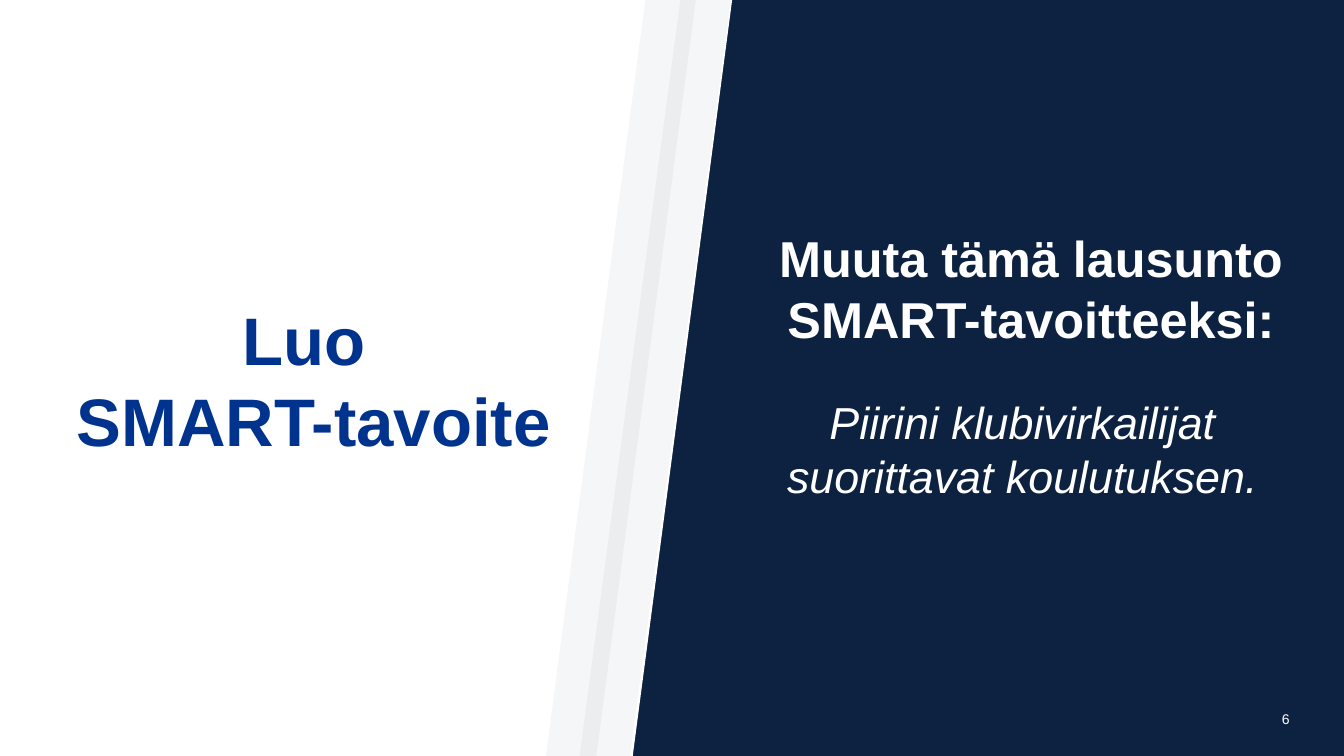
from lxml.etree import SubElement
from pptx import Presentation
from pptx.dml.color import RGBColor
from pptx.enum.text import MSO_ANCHOR as Anchor, PP_ALIGN as Align
from pptx.oxml.ns import qn
from pptx.util import Pt

WIDTH, HEIGHT = 960, 540
NAVY, BLUE, WHITE = "0D2240", "00338D", "FFFFFF"
SLANT = 71.5


def color(value):
    """Turn a hex string into a colour."""
    return RGBColor.from_string(value)


def add_polygon(page, points, fill, alpha=None):
    """Draw a filled outline through points, with optional opacity in percent."""
    builder = page.shapes.build_freeform(*points[0], scale=Pt(1))
    builder.add_line_segments(points[1:], close=True)
    shape = builder.convert_to_shape()
    shape.shadow.inherit = False
    shape.fill.solid()
    shape.fill.fore_color.rgb = color(fill)
    shape.line.fill.background()
    if alpha is not None:
        tint = shape.fill._xPr.find(qn("a:solidFill"))[0]
        SubElement(tint, qn("a:alpha")).set("val", str(alpha * 1000))


def add_text(page, box, lines, ink, align=Align.CENTER, anchor=Anchor.TOP, **formats):
    """Place a wrapped text box with one paragraph per line."""
    frame = page.shapes.add_textbox(*map(Pt, box)).text_frame
    frame.word_wrap = True
    frame.vertical_anchor = anchor
    for index, line in enumerate(lines):
        para = frame.add_paragraph() if index else frame.paragraphs[0]
        para.alignment = align
        span = para.add_run()
        span.text = line
        for name, value in {"name": "Arial", **formats}.items():
            setattr(span.font, name, value)
        span.font.color.rgb = color(ink)


def add_backdrop(page, left, top, width, height):
    """Split the box into a white and a navy side along slanted bands."""
    bottom = top + height
    page.background.fill.solid()
    page.background.fill.fore_color.rgb = color(NAVY)
    edge = left + width * 0.545
    add_polygon(page, [(left, top), (edge, top), (edge - SLANT, bottom), (left, bottom)], WHITE)
    band = 36
    for start in (left + 461, left + 486):
        add_polygon(page, [(start, top), (start + band, top),
                           (start + band - SLANT, bottom), (start - SLANT, bottom)], NAVY, 4)


def add_title(page, left, top, width, height):
    """Write the title at the foot of the box."""
    add_text(page, (left, top, width, height), ["Luo ", "SMART-tavoite"], BLUE,
             anchor=Anchor.BOTTOM, size=Pt(48), bold=True)


def add_task(page, left, top, width, height):
    """Write the instruction and, below it, the statement to rework."""
    add_text(page, (left, top, width, 96), ["Muuta tämä lausunto SMART-tavoitteeksi:"],
             WHITE, size=Pt(36), bold=True)
    add_text(page, (left + 32, top + 119.5, 371, height - 119.5),
             ["Piirini klubivirkailijat suorittavat koulutuksen."],
             WHITE, size=Pt(32), italic=True)


def add_page_number(page, left, top, width, height):
    """Write the slide number."""
    add_text(page, (left, top, width, height), ["6"], WHITE, align=Align.LEFT, size=Pt(10))


def main():
    """Build the slide and save it."""
    deck = Presentation()
    deck.slide_width, deck.slide_height = Pt(WIDTH), Pt(HEIGHT)
    page = deck.slides.add_slide(deck.slide_layouts[6])
    add_backdrop(page, 0, 0, WIDTH, HEIGHT)
    add_title(page, 43, 208, 362, 124)
    add_task(page, 513, 159, 447, 243.5)
    add_page_number(page, 908.5, 504, 51.5, 36)
    deck.save("out.pptx")


if __name__ == "__main__":
    main()
